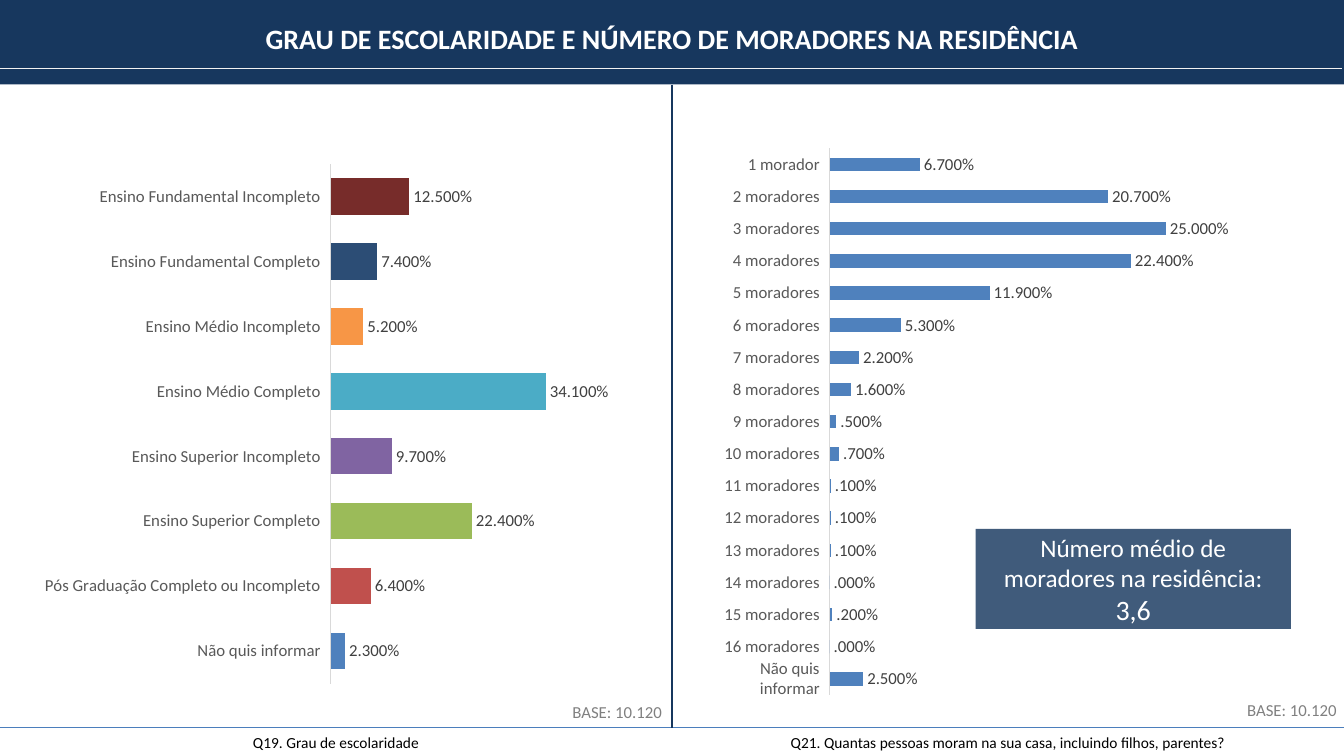
from lxml.etree import SubElement
from pptx import Presentation
from pptx.chart.data import CategoryChartData
from pptx.dml.color import RGBColor
from pptx.enum.chart import XL_CHART_TYPE, XL_LABEL_POSITION, XL_TICK_LABEL_POSITION, XL_TICK_MARK
from pptx.enum.shapes import MSO_CONNECTOR, MSO_SHAPE
from pptx.enum.text import MSO_ANCHOR, PP_ALIGN
from pptx.oxml import parse_xml
from pptx.oxml.ns import nsdecls, qn
from pptx.util import Cm, Pt

NAVY = RGBColor(0x17, 0x37, 0x5E)
WHITE = RGBColor(0xFF, 0xFF, 0xFF)
BLACK = RGBColor(0, 0, 0)
RULE_WHITE = RGBColor(0xF2, 0xF2, 0xF2)
RULE_BLUE = RGBColor(0x4B, 0x7E, 0xBC)
GREY = RGBColor(0x80, 0x80, 0x80)
AXIS_TEXT = RGBColor(0x59, 0x59, 0x59)
AXIS_LINE = RGBColor(0xD9, 0xD9, 0xD9)
LABEL_TEXT = RGBColor(0x40, 0x40, 0x40)
BAR_BLUE = RGBColor(0x4F, 0x81, 0xBD)
SCHOOLING_COLORS = [
    BAR_BLUE, RGBColor(0xC0, 0x50, 0x4D), RGBColor(0x9B, 0xBB, 0x59),
    RGBColor(0x80, 0x64, 0xA2), RGBColor(0x4B, 0xAC, 0xC6), RGBColor(0xF7, 0x96, 0x46),
    RGBColor(0x2C, 0x4D, 0x75), RGBColor(0x77, 0x2C, 0x2A),
]

FONT = "Calibri"
PERCENT = "#.#00%"
WIDTH, HEIGHT = Cm(33.87), Cm(19.05)
HALF = WIDTH // 2
HEADER_HEIGHT = Cm(2.13)
FOOTER_TOP = Cm(18.34)

SCHOOLING = [
    ("Não quis informar", 0.023),
    ("Pós Graduação Completo ou Incompleto", 0.064),
    ("Ensino Superior Completo", 0.224),
    ("Ensino Superior Incompleto", 0.097),
    ("Ensino Médio Completo", 0.341),
    ("Ensino Médio Incompleto", 0.052),
    ("Ensino Fundamental Completo", 0.074),
    ("Ensino Fundamental Incompleto", 0.125),
]
RESIDENT_SHARES = [0.067, 0.207, 0.25, 0.224, 0.119, 0.053, 0.022, 0.016,
                   0.005, 0.007, 0.001, 0.001, 0.001, 0, 0.002, 0]
RESIDENTS = [(f"{count} morador{'es' if count > 1 else ''}", share)
             for count, share in enumerate(RESIDENT_SHARES, 1)]
RESIDENTS.append(("Não quis informar", 0.025))


def set_font(font, size, color, bold=False):
    font.name, font.size, font.bold = FONT, Pt(size), bold
    font.color.rgb = color


def add_text(slide, text, box, size, color, align):
    frame = slide.shapes.add_textbox(*box).text_frame
    frame.word_wrap = True
    paragraph = frame.paragraphs[0]
    paragraph.text, paragraph.alignment = text, align
    set_font(paragraph.font, size, color)


def add_block(slide, box):
    block = slide.shapes.add_shape(MSO_SHAPE.RECTANGLE, *box)
    block.shadow.inherit = False
    block.fill.solid()
    block.fill.fore_color.rgb = NAVY
    block.line.fill.background()
    return block


def add_line(slide, start, end, color, width):
    line = slide.shapes.add_connector(MSO_CONNECTOR.STRAIGHT, *start, *end)
    line.line.color.rgb, line.line.width = color, Pt(width)
    SubElement(line.element.spPr, qn("a:effectLst"))
    return line


def build_header(slide, left, top, width, height):
    band = add_block(slide, (left, top, width, height))
    # Title sits in front of the band
    title = slide.shapes.title
    band.element.addnext(title.element)
    title.left, title.top, title.width, title.height = left, top + Cm(0.41), width, Cm(1.12)
    title.text_frame.text = "GRAU DE ESCOLARIDADE E NÚMERO DE MORADORES NA RESIDÊNCIA"
    title.text_frame.vertical_anchor = MSO_ANCHOR.MIDDLE
    paragraph = title.text_frame.paragraphs[0]
    paragraph.alignment = PP_ALIGN.CENTER
    set_font(paragraph.font, 20, WHITE, bold=True)
    rule_y = top + Cm(1.73)
    add_line(slide, (left, rule_y), (left + width - Cm(0.05), rule_y), RULE_WHITE, 1)
    return band


def set_plot_layout(chart, fractions):
    """Fix the inner plot area as x, y, width and height fractions."""
    plot_area = chart.plots[0]._element.getparent()
    for layout in plot_area.findall(qn("c:layout")):
        plot_area.remove(layout)
    sizes = "".join(f'<c:{key} val="{value}"/>' for key, value in zip("xywh", fractions))
    plot_area.insert(0, parse_xml(
        f'<c:layout {nsdecls("c")}><c:manualLayout><c:layoutTarget val="inner"/>'
        f'<c:xMode val="edge"/><c:yMode val="edge"/>{sizes}</c:manualLayout></c:layout>'))


def add_bar_chart(slide, box, rows, gap, maximum, plot_box, colors=(), reverse=False):
    data = CategoryChartData(number_format=PERCENT)
    data.categories = [name for name, _ in rows]
    data.add_series("Series 1", [value for _, value in rows])
    chart = slide.shapes.add_chart(XL_CHART_TYPE.BAR_CLUSTERED, *box, data).chart
    chart.has_legend = chart.has_title = False
    set_font(chart.font, 10, BLACK)
    set_plot_layout(chart, plot_box)

    # Axes
    category_axis, value_axis = chart.category_axis, chart.value_axis
    category_axis.major_tick_mark = category_axis.minor_tick_mark = XL_TICK_MARK.NONE
    category_axis.tick_label_position = XL_TICK_LABEL_POSITION.LOW
    category_axis.reverse_order = reverse
    category_axis.format.line.color.rgb = AXIS_LINE
    category_axis.format.line.width = Pt(0.75)
    set_font(category_axis.tick_labels.font, 12, AXIS_TEXT)
    value_axis.visible = value_axis.has_major_gridlines = False
    value_axis.minimum_scale, value_axis.maximum_scale = 0, maximum

    # Bars and their labels
    plot = chart.plots[0]
    plot.gap_width, plot.vary_by_categories = gap, False
    series = plot.series[0]
    series.format.fill.solid()
    series.format.fill.fore_color.rgb = BAR_BLUE
    for index, color in enumerate(colors):
        fill = series.points[index].format.fill
        fill.solid()
        fill.fore_color.rgb = color
    labels = series.data_labels
    labels.show_value = True
    labels.position = XL_LABEL_POSITION.OUTSIDE_END
    labels.number_format, labels.number_format_is_linked = PERCENT, False
    set_font(labels.font, 12, LABEL_TEXT)


def build_panel_texts(slide, left, width, question, base_right, base_top):
    add_text(slide, question, (left, FOOTER_TOP, width, Cm(0.74)), 11, BLACK, PP_ALIGN.CENTER)
    base_width = Cm(5.79)
    add_text(slide, "BASE: 10.120", (base_right - base_width, base_top, base_width, Cm(0.76)),
             12, GREY, PP_ALIGN.RIGHT)


def build_schooling_panel(slide, left, top, width):
    add_bar_chart(slide, (left + Cm(1), top + Cm(1.73), Cm(15.6), Cm(13.64)), SCHOOLING,
                  78, 0.5, (0.47, 0.02, 0.51, 0.96), SCHOOLING_COLORS)
    build_panel_texts(slide, left, width, "Q19. Grau de escolaridade",
                      left + width, Cm(17.55))


def build_residents_panel(slide, left, top, width):
    add_bar_chart(slide, (left + Cm(1.2), top + Cm(1.32), Cm(13.21), Cm(14.5)), RESIDENTS,
                  139, 0.3, (0.21, 0.02, 0.77, 0.95), reverse=True)
    build_panel_texts(slide, left, width,
                      "Q21. Quantas pessoas moram na sua casa, incluindo filhos, parentes?",
                      left + width + Cm(0.07), Cm(17.5))
    # Average callout
    callout = add_block(slide, (left + Cm(7.65), top + Cm(11.2), Cm(7.95), Cm(2.52)))
    color = callout.fill._xPr.find(qn("a:solidFill"))[0]
    SubElement(color, qn("a:alpha"), val="82000")
    frame = callout.text_frame
    frame.word_wrap, frame.vertical_anchor = True, MSO_ANCHOR.MIDDLE
    frame.text = "Número médio de moradores na residência:\n3,6"
    for paragraph, size in zip(frame.paragraphs, (18, 20)):
        paragraph.alignment = PP_ALIGN.CENTER
        set_font(paragraph.font, size, WHITE)


def main():
    presentation = Presentation()
    presentation.slide_width, presentation.slide_height = WIDTH, HEIGHT
    slide = presentation.slides.add_slide(presentation.slide_layouts[5])

    band = build_header(slide, 0, 0, WIDTH, HEADER_HEIGHT)
    # Footer rule and divider between the panels
    add_line(slide, (0, FOOTER_TOP), (WIDTH, FOOTER_TOP), RULE_BLUE, 0.75)
    divider = add_line(slide, (HALF, HEADER_HEIGHT), (HALF, FOOTER_TOP), NAVY, 1)
    divider.begin_connect(band, 2)

    build_schooling_panel(slide, 0, HEADER_HEIGHT, HALF)
    build_residents_panel(slide, HALF, HEADER_HEIGHT, HALF)
    presentation.save("out.pptx")


if __name__ == "__main__":
    main()
